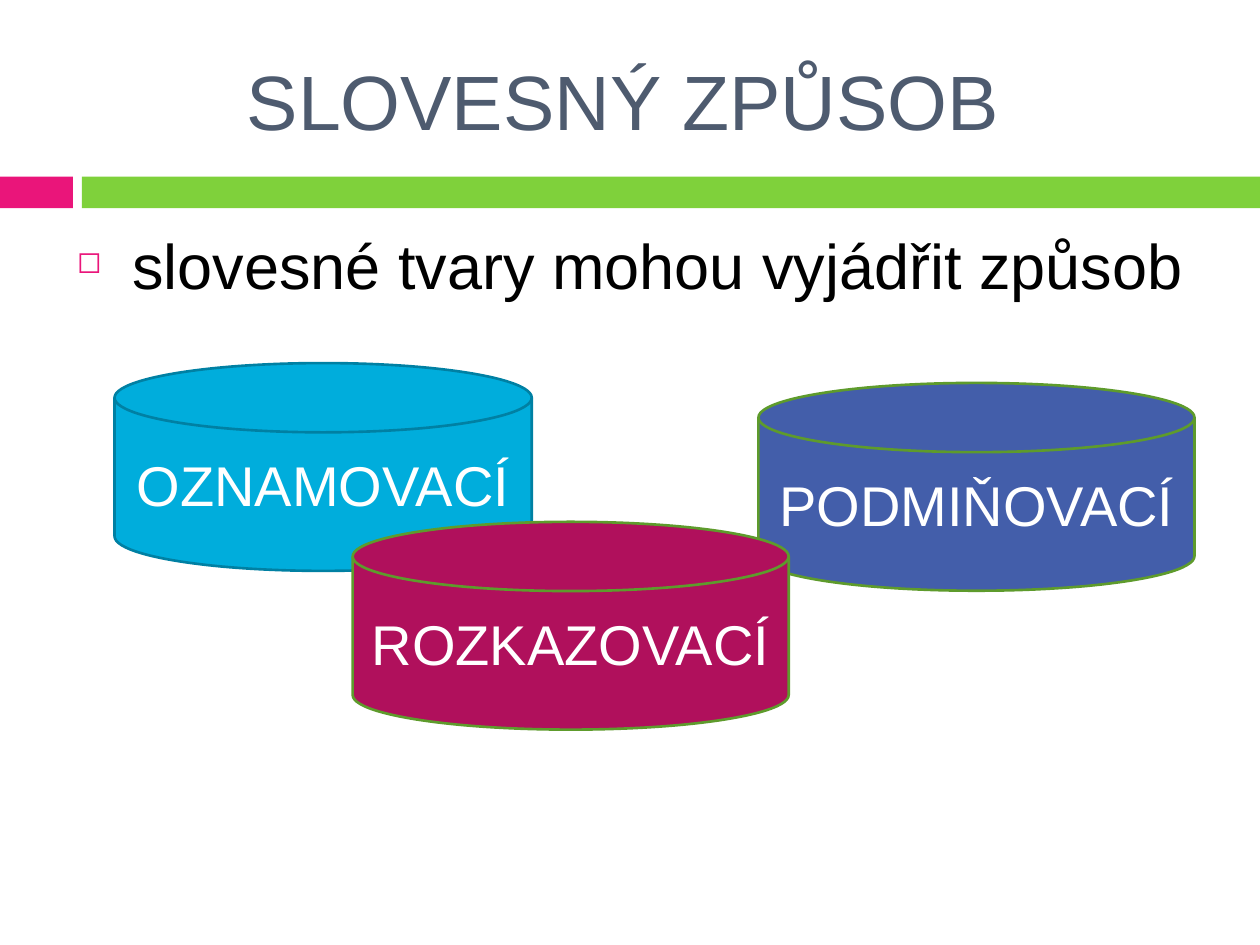
from pptx import Presentation
from pptx.dml.color import RGBColor
from pptx.enum import shapes, text
from pptx.oxml import parse_xml
from pptx.oxml.ns import nsdecls
from pptx.util import Cm, Pt

FONT = "Arial"
PINK, GREEN = "EA157A", "7FD13B"
WIDE, HIGH = 25.4, 19.05


def paint(color, value):
    color.rgb = RGBColor.from_string(value)


def style(para, size, color):
    para.font.name = FONT
    para.font.size = Pt(size)
    paint(para.font.color, color)


def indent(para, left, first=0):
    props = para._p.get_or_add_pPr()
    props.set("marL", str(Cm(left)))
    props.set("indent", str(Cm(first)))
    return props


def add_shape(slide, kind, box, fill):
    shape = slide.shapes.add_shape(kind, *map(Cm, box))
    shape.shadow.inherit = False
    shape.fill.solid()
    paint(shape.fill.fore_color, fill)
    return shape


def add_bar(slide, left, width, fill):
    bar = add_shape(slide, shapes.MSO_SHAPE.RECTANGLE, (left, 3.56, width, 0.64), fill)
    bar.line.fill.background()


def set_title(slide, words):
    title = slide.shapes.title
    title.left, title.top, title.width, title.height = map(Cm, (1.7, 0.63, 22.66, 2.74))
    frame = title.text_frame
    frame.text = words
    frame.auto_size = text.MSO_AUTO_SIZE.NONE
    frame.vertical_anchor = text.MSO_ANCHOR.MIDDLE
    para = frame.paragraphs[0]
    para.alignment = text.PP_ALIGN.LEFT
    indent(para, 3.02)
    style(para, 44, "4E5B6F")


def add_bullet(slide, words):
    box = slide.shapes.add_textbox(*map(Cm, (1.3, 4.45, 23.6, 12.5)))
    frame = box.text_frame
    frame.word_wrap = True
    para = frame.paragraphs[0]
    para.text = words
    para.space_before = Pt(7)
    style(para, 36, "000000")
    props = indent(para, 1.12, -1.12)
    ns = nsdecls("a")
    marks = (
        f'<a:buClr {ns}><a:srgbClr val="{PINK}"/></a:buClr>',
        f'<a:buSzPct {ns} val="48000"/>',
        f'<a:buChar {ns} char="◻"/>',
    )
    # Bullet marks stand before the default run properties
    for mark in marks:
        props.find("{*}defRPr").addprevious(parse_xml(mark))


def add_disk(slide, words, left, top, width, fill, edge):
    kind = shapes.MSO_SHAPE.FLOWCHART_MAGNETIC_DISK
    disk = add_shape(slide, kind, (left, top, width, 4.19), fill)
    paint(disk.line.color, edge)
    disk.line.width = Pt(1.5)
    frame = disk.text_frame
    frame.text = words
    frame.word_wrap = True
    frame.vertical_anchor = text.MSO_ANCHOR.MIDDLE
    para = frame.paragraphs[0]
    para.alignment = text.PP_ALIGN.CENTER
    style(para, 32, "FFFFFF")


def main():
    deck = Presentation()
    deck.slide_width, deck.slide_height = Cm(WIDE), Cm(HIGH)
    slide = deck.slides.add_slide(deck.slide_layouts[5])

    # Band under the title
    add_bar(slide, 0, 1.47, PINK)
    add_bar(slide, 1.65, WIDE - 1.65, GREEN)

    # Title and statement
    set_title(slide, "SLOVESNÝ ZPŮSOB")
    add_bullet(slide, "slovesné tvary mohou vyjádřit způsob")

    # The three moods
    add_disk(slide, "OZNAMOVACÍ", 2.31, 7.32, 8.41, "00ADDC", "0080A3")
    add_disk(slide, "PODMIŇOVACÍ", 15.29, 7.72, 8.79, "435EAA", "5E9B2C")
    add_disk(slide, "ROZKAZOVACÍ", 7.11, 10.52, 8.79, "B0105C", "5E9B2C")

    deck.save("out.pptx")


if __name__ == "__main__":
    main()
